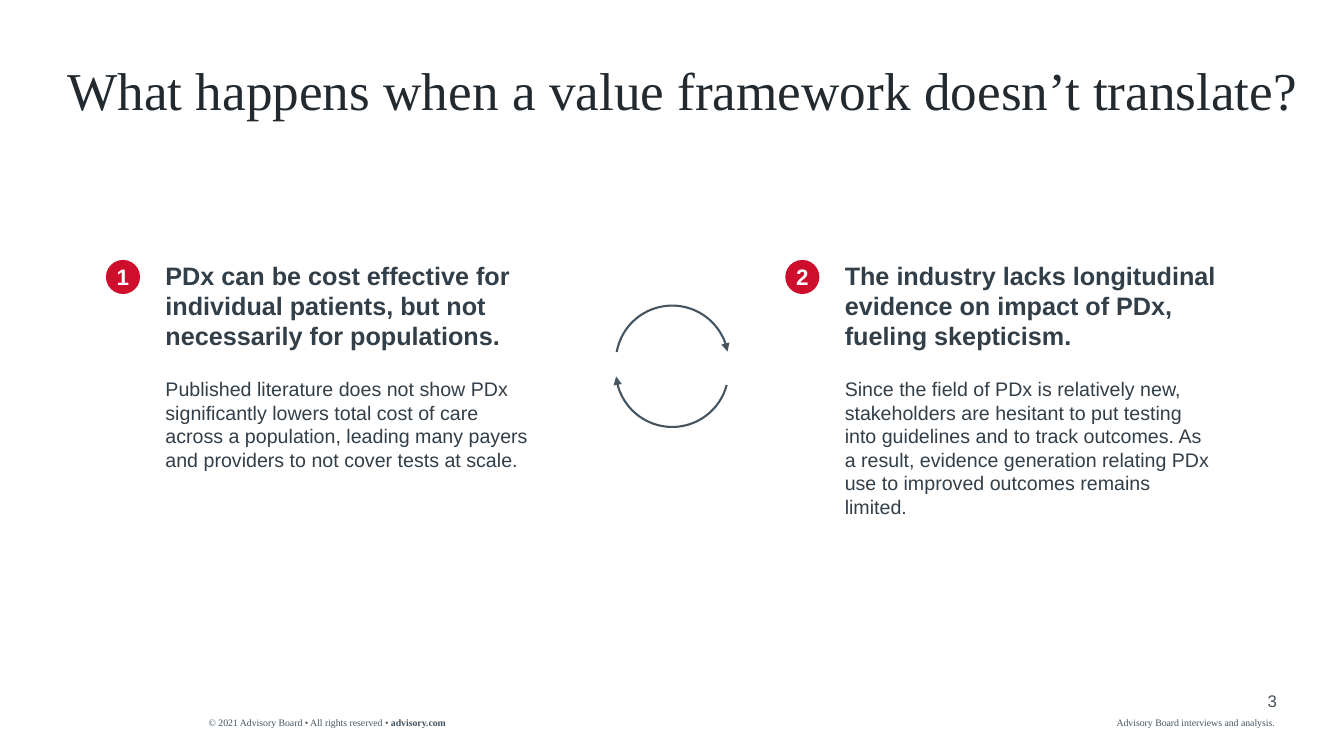
"""Builds the slide on value frameworks for PDx with two numbered findings and a cycle."""
from dataclasses import dataclass

from lxml import etree
from pptx import Presentation
from pptx import util as u
from pptx.dml.color import RGBColor
from pptx.enum import shapes, text
from pptx.oxml.ns import qn


@dataclass(frozen=True)
class Theme:
    """Colours, fonts and type sizes of the slide."""
    ink: str = "222A30"
    prose: str = "323E48"
    muted: str = "445460"
    accent: str = "CE0E2D"
    white: str = "FFFFFF"
    serif: str = "Times New Roman"
    sans: str = "Arial"
    title: int = 38
    heading: int = 18
    badge: int = 16
    body: int = 14
    number: int = 12
    footer: int = 7


class SlideBuilder:
    """Holds the theme and the current slide and draws each kind of element."""

    def __init__(self, slide, theme):
        """Keep the slide and its theme."""
        self.slide = slide
        self.theme = theme

    def set_words(self, frame, parts, font, size, colour, bold=False,
                  align=text.PP_ALIGN.LEFT, anchor=text.MSO_ANCHOR.TOP):
        """Fill a text frame with one paragraph of (wording, bold) parts."""
        frame.margin_left = frame.margin_right = 0
        frame.margin_top = frame.margin_bottom = 0
        frame.word_wrap = True
        frame.auto_size = text.MSO_AUTO_SIZE.NONE
        frame.vertical_anchor = anchor
        paragraph = frame.paragraphs[0]
        paragraph.alignment = align
        if isinstance(parts, str):
            parts = [(parts, bold)]
        for wording, weight in parts:
            run = paragraph.add_run()
            run.text = wording
            run.font.name = font
            run.font.size = u.Pt(size)
            run.font.bold = weight
            run.font.color.rgb = RGBColor.from_string(colour)
        return paragraph

    def title(self, box, wording):
        """Place and format the title placeholder."""
        heading = self.slide.shapes.title
        heading.left, heading.top, heading.width, heading.height = map(u.Cm, box)
        line = self.set_words(heading.text_frame, wording, self.theme.serif,
                              self.theme.title, self.theme.ink)
        line.line_spacing = 0.9

    def label(self, canvas, box, parts, font, size, colour, **style):
        """Add a text box."""
        frame = canvas.add_textbox(*map(u.Cm, box)).text_frame
        self.set_words(frame, parts, font, size, colour, **style)

    def badge(self, canvas, left, top, number):
        """Add a numbered disc."""
        disc = canvas.add_shape(shapes.MSO_SHAPE.OVAL, u.Cm(left), u.Cm(top),
                                u.Cm(0.86), u.Cm(0.86))
        disc.shadow.inherit = False
        disc.fill.solid()
        disc.fill.fore_color.rgb = RGBColor.from_string(self.theme.accent)
        disc.line.fill.background()
        self.set_words(disc.text_frame, str(number), self.theme.sans,
                       self.theme.badge, self.theme.white, bold=True,
                       align=text.PP_ALIGN.CENTER, anchor=text.MSO_ANCHOR.MIDDLE)

    def finding(self, number, left, heading, heading_width, body, body_height):
        """Add a numbered finding with its heading and explanation."""
        theme, top, indent = self.theme, 6.55, 1.5
        canvas = self.slide.shapes.add_group_shape().shapes
        self.badge(canvas, left, top, number)
        self.label(canvas, (left + indent, top, heading_width, 2.31), heading,
                   theme.sans, theme.heading, theme.prose, bold=True)
        self.label(canvas, (left + indent, 9.5, 9.4, body_height), body,
                   theme.sans, theme.body, theme.prose)

    def cycle(self, left, size, turns):
        """Add arrowed arcs, one for each (top, rotation) turn."""
        canvas = self.slide.shapes.add_group_shape().shapes
        for top, rotation in turns:
            arc = canvas.add_shape(shapes.MSO_SHAPE.ARC, u.Cm(left), u.Cm(top),
                                   u.Cm(size), u.Cm(size))
            arc.adjustments[0] = 168.09
            arc.adjustments[1] = 47.64
            arc.rotation = rotation
            arc.shadow.inherit = False
            arc.fill.background()
            arc.line.color.rgb = RGBColor.from_string(self.theme.muted)
            arc.line.width = u.Pt(1.5)
            outline = arc.element.spPr.find(qn("a:ln"))
            etree.SubElement(outline, qn("a:tailEnd"), type="triangle")

    def footer(self, rights, credit, number):
        """Add the copyright line, the source line and the page number."""
        theme, canvas = self.theme, self.slide.shapes
        for left, width, parts in ((5.26, 8.28, rights), (28.14, 4.3, credit)):
            self.label(canvas, (left, 18.06, width, 0.3), parts,
                       theme.serif, theme.footer, theme.muted)
        self.label(canvas, (30.91, 17.4, 1.27, 0.51), str(number), theme.sans,
                   theme.number, theme.muted, align=text.PP_ALIGN.RIGHT)


def main():
    """Build and save the slide."""
    deck = Presentation()
    deck.slide_width, deck.slide_height = u.Cm(33.87), u.Cm(19.05)
    title_only = deck.slide_layouts[5]
    builder = SlideBuilder(deck.slides.add_slide(title_only), Theme())
    builder.title((1.7, 1.63, 32.16, 1.5),
                  "What happens when a value framework doesn’t translate?")
    builder.finding(
        1, 2.67,
        "PDx can be cost effective for individual patients, but not necessarily "
        "for populations.", 9.63,
        "Published literature does not show PDx significantly lowers total cost of "
        "care across a population, leading many payers and providers to not cover "
        "tests at scale.", 2.39)
    builder.finding(
        2, 19.79,
        "The industry lacks longitudinal evidence on impact of PDx, fueling "
        "skepticism.", 9.91,
        "Since the field of PDx is relatively new, stakeholders are hesitant to put "
        "testing into guidelines and to track outcomes. As a result, evidence "
        "generation relating PDx use to improved outcomes remains limited.", 3)
    builder.cycle(15.52, 2.84, ((7.7, 270), (7.92, 94.6)))
    builder.footer((("© 2021 Advisory Board • All rights reserved • ", False),
                    ("advisory.com", True)),
                   "Advisory Board interviews and analysis.", 3)
    deck.save("out.pptx")


if __name__ == "__main__":
    main()
